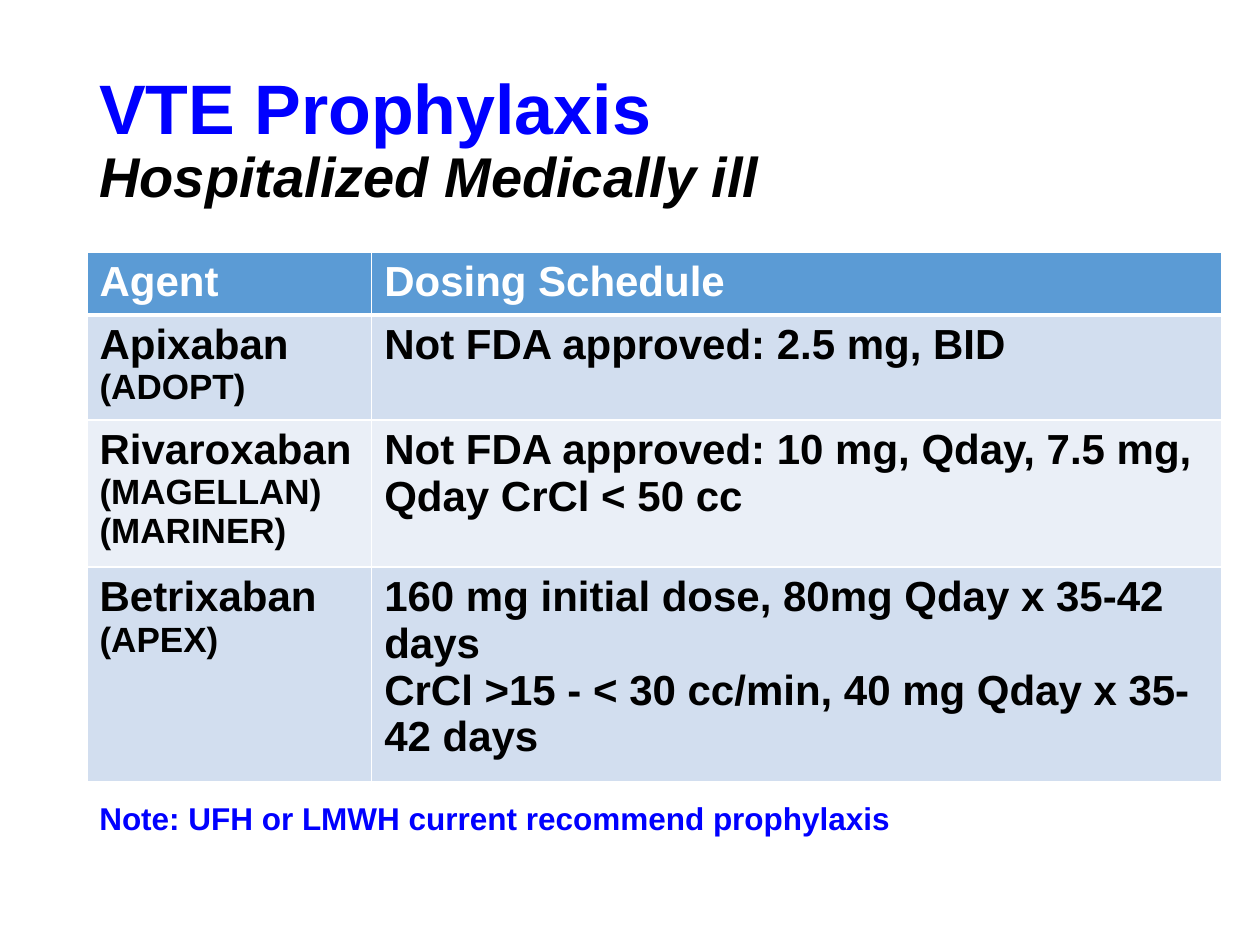
from dataclasses import dataclass

from lxml.etree import SubElement
from pptx import Presentation
from pptx.dml.color import RGBColor as Rgb
from pptx.enum.text import MSO_ANCHOR as Anchor
from pptx.oxml.ns import qn
from pptx.util import Inches, Pt


@dataclass(frozen=True)
class Theme:
    font: str = "Arial"
    accent: str = "0000FF"
    ink: str = "000000"
    paper: str = "FFFFFF"
    header: str = "5B9BD5"
    bands: tuple = ("EAEFF7", "D2DEEF")
    title: int = 40
    subtitle: int = 32
    body: int = 24
    trial: int = 20
    note: int = 18
    rule: int = 1
    header_rule: int = 3


class DosingSlide:
    def __init__(self, deck, theme):
        self.theme = theme
        self.width, self.height = deck.slide_width, deck.slide_height
        self.slide = deck.slides.add_slide(deck.slide_layouts[6])

    def across(self, share):
        return int(self.width * share)

    def down(self, share):
        return int(self.height * share)

    def style(self, font, size, color):
        font.name, font.size, font.bold = self.theme.font, Pt(size), True
        font.color.rgb = Rgb.from_string(color)

    def text_frame(self, left, top, width, height, wrap=True):
        frame = self.slide.shapes.add_textbox(
            self.across(left), self.down(top), self.across(width), self.down(height)
        ).text_frame
        frame.word_wrap = wrap
        return frame

    def title(self, heading, subheading, *box):
        frame = self.text_frame(*box)
        frame.vertical_anchor = Anchor.MIDDLE
        paragraph = frame.paragraphs[0]
        paragraph.line_spacing = 0.9
        first = paragraph.add_run()
        first.text = heading
        self.style(first.font, self.theme.title, self.theme.accent)
        paragraph.add_line_break()
        second = paragraph.add_run()
        second.text = subheading
        self.style(second.font, self.theme.subtitle, self.theme.ink)
        second.font.italic = True

    def note(self, wording, *box):
        paragraph = self.text_frame(*box, wrap=False).paragraphs[0]
        paragraph.text = wording
        self.style(paragraph.font, self.theme.note, self.theme.accent)

    def borders(self, cell, is_header):
        properties = cell._tc.get_or_add_tcPr()
        for side in "LRTB":
            thick = (is_header and side == "B")
            weight = self.theme.header_rule if thick else self.theme.rule
            line = SubElement(properties, qn(f"a:ln{side}"), w=str(Pt(weight)))
            fill = SubElement(line, qn("a:solidFill"))
            SubElement(fill, qn("a:srgbClr"), val=self.theme.paper)

    def cell(self, cell, lines, row, column):
        theme, is_header = self.theme, row == 0
        self.borders(cell, is_header)
        cell.fill.solid()
        band = theme.header if is_header else theme.bands[row % 2]
        cell.fill.fore_color.rgb = Rgb.from_string(band)
        cell.text = "\n".join(lines)
        for index, paragraph in enumerate(cell.text_frame.paragraphs):
            size = theme.trial if column == 0 and index else theme.body
            self.style(paragraph.font, size, theme.paper if is_header else theme.ink)

    def table(self, rows, left, top, column_shares, row_shares):
        grid = self.slide.shapes.add_table(
            len(rows), len(column_shares), self.across(left), self.down(top),
            self.across(sum(column_shares)), self.down(sum(row_shares)),
        ).table
        for column, share in zip(grid.columns, column_shares):
            column.width = self.across(share)
        for row, share in zip(grid.rows, row_shares):
            row.height = self.down(share)
        for row, entries in enumerate(rows):
            for column, lines in enumerate(entries):
                self.cell(grid.cell(row, column), lines, row, column)


DOSING = [
    (["Agent"], ["Dosing Schedule"]),
    (["Apixaban", "(ADOPT)"], ["Not FDA approved: 2.5 mg, BID"]),
    (
        ["Rivaroxaban", "(MAGELLAN)", "(MARINER)"],
        ["Not FDA approved: 10 mg, Qday, 7.5 mg, Qday CrCl < 50 cc"],
    ),
    (
        ["Betrixaban", "(APEX)"],
        [
            "160 mg initial dose, 80mg Qday x 35-42 days",
            "CrCl >15 - < 30 cc/min, 40 mg Qday x 35-42 days",
        ],
    ),
]


def main():
    deck = Presentation()
    deck.slide_width, deck.slide_height = Inches(10), Inches(7.5)
    page = DosingSlide(deck, Theme())
    margin = 0.69 / 10
    page.title("VTE Prophylaxis", "Hospitalized Medically ill",
               margin, 0.4 / 7.5, 1 - 2 * margin, 1.45 / 7.5)
    page.table(DOSING, margin, 2 / 7.5, (0.226, 0.675),
               [inches / 7.5 for inches in (0.47, 0.78, 1.1, 1.58)])
    page.note("Note: UFH or LMWH current recommend prophylaxis",
              margin, 6.29 / 7.5, 0.65, 0.4 / 7.5)
    deck.save("out.pptx")


if __name__ == "__main__":
    main()
